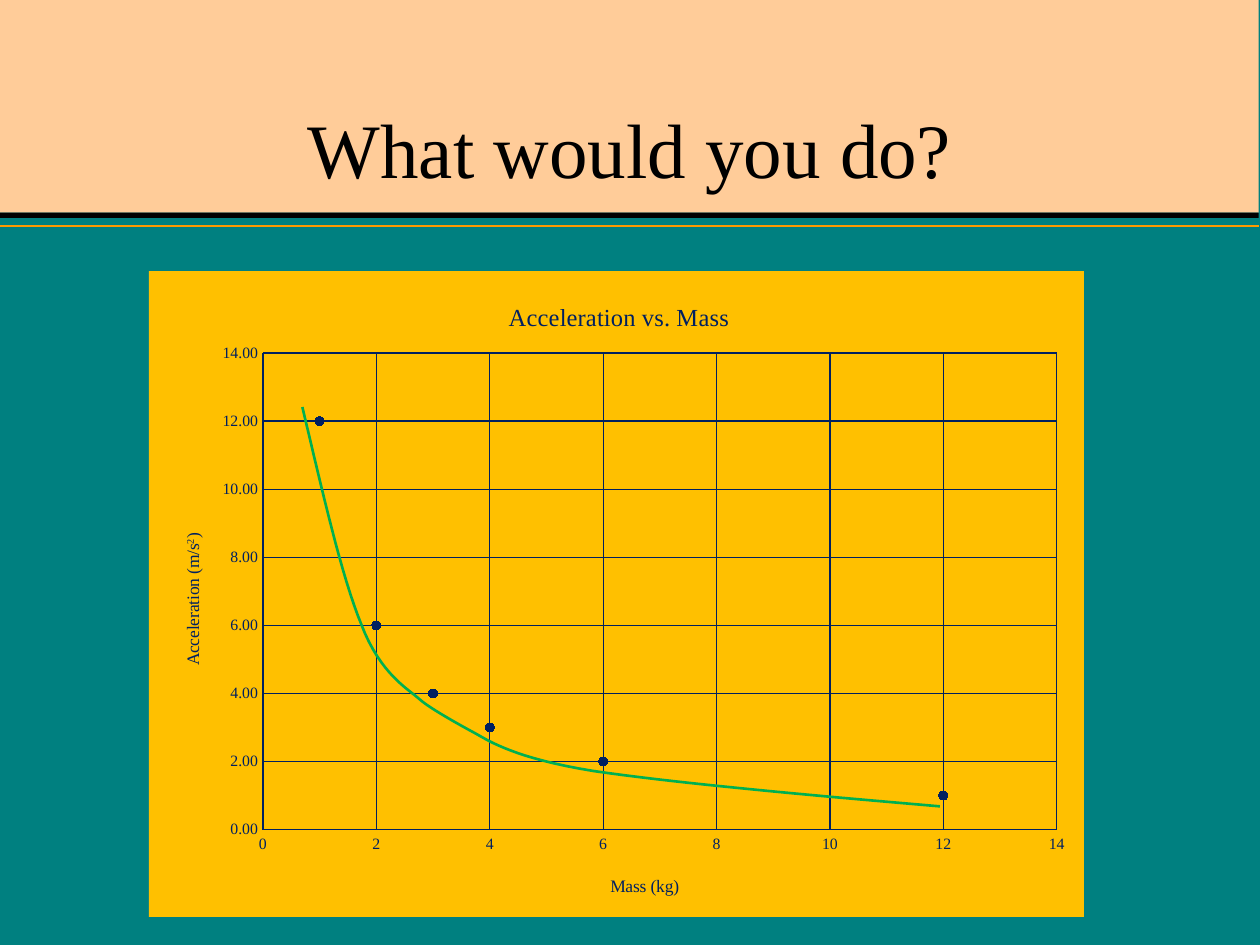
from lxml.etree import SubElement
from pptx import Presentation
from pptx.chart.data import XyChartData
from pptx.dml.color import RGBColor
from pptx.enum.chart import XL_CHART_TYPE, XL_MARKER_STYLE, XL_TICK_LABEL_POSITION, XL_TICK_MARK
from pptx.enum.shapes import MSO_CONNECTOR, MSO_SHAPE
from pptx.enum.text import MSO_ANCHOR, PP_ALIGN
from pptx.oxml import parse_xml
from pptx.oxml.ns import nsdecls, qn
from pptx.util import Pt

# Content
TITLE = "What would you do?"
CHART_TITLE = "Acceleration vs. Mass"
POINTS = [(12, 1), (6, 2), (4, 3), (3, 4), (2, 6), (1, 12)]
X_TITLE = [("Mass (kg)", False)]
Y_TITLE = [("Acceleration (m/s", False), ("2", True), (")", False)]

FONT, NAVY = "Times New Roman", "002060"
BAND_W = 719.3
BANDS = [(0, 121.5, "FFCC99"), (121.5, 3, "000000")]  # top, height, colour
RULE_Y = 129
CHART_BOX = (85.1, 154.9, 534.3, 369.1)

# Trend curve: start, then two control points and an end for each piece
CURVE_START = (172.8, 232.6)
CURVE = [
    ((184.3, 280.8), (195.1, 329), (206.6, 357.1)),
    ((217.4, 385.2), (233.3, 393.8), (239.8, 399.6)),
    ((246.2, 405.4), (266.4, 416.2), (272.9, 419.8)),
    ((279.4, 423.4), (294.5, 433.4), (339.1, 440.6)),
    ((383, 447.1), (460.1, 454.3), (537.1, 460.8)),
]
STEPS = 16


def rgb(value):
    return RGBColor.from_string(value)


def style_font(font, size, color):
    font.name, font.size, font.bold = FONT, Pt(size), False
    font.color.rgb = rgb(color)


def style_line(line, color, width):
    line.color.rgb = rgb(color)
    line.width = Pt(width)


def set_layout(parent, index, **values):
    """Place a chart part by fractions of the chart's size."""
    for old in parent.findall(qn("c:layout")):
        parent.remove(old)
    layout = parse_xml(f"<c:layout {nsdecls('c')}><c:manualLayout/></c:layout>")
    for tag, value in values.items():
        SubElement(layout[0], qn("c:" + tag)).set("val", str(value))
    parent.insert(index, layout)


def set_title(title, runs, size, x, y):
    p = title.text_frame.paragraphs[0]
    style_font(p.font, size, NAVY)
    for text, raised in runs:
        r = p.add_run()
        r.text = text
        if raised:
            r.font._element.set("baseline", "30000")
    set_layout(title._element, 1, xMode="edge", yMode="edge", x=x, y=y)


def bezier(p0, p1, p2, p3, t):
    u = 1 - t
    return tuple(Pt(u**3 * a + 3 * u * u * t * b + 3 * u * t * t * c + t**3 * d)
                 for a, b, c, d in zip(p0, p1, p2, p3))


prs = Presentation()
prs.slide_width, prs.slide_height = Pt(720), Pt(540)
s = prs.slides.add_slide(prs.slide_layouts[5])
s.background.fill.solid()
s.background.fill.fore_color.rgb = rgb("008080")

# Header bands and rule
for top, height, color in BANDS:
    sp = s.shapes.add_shape(MSO_SHAPE.RECTANGLE, 0, Pt(top), Pt(BAND_W), Pt(height))
    sp.shadow.inherit = False
    sp.fill.solid()
    sp.fill.fore_color.rgb = rgb(color)
    sp.line.fill.background()
rule = s.shapes.add_connector(MSO_CONNECTOR.STRAIGHT, 0, Pt(RULE_Y), Pt(BAND_W), Pt(RULE_Y))
style_line(rule.line, "FF9900", 1)
SubElement(rule._element.spPr, qn("a:effectLst"))

# Title, brought in front of the bands
title = s.shapes.title
title.element.getparent().append(title.element)
title.left, title.top, title.width, title.height = Pt(54), Pt(27.4), Pt(612), Pt(87)
tf = title.text_frame
tf.text = TITLE
tf.vertical_anchor = MSO_ANCHOR.BOTTOM
p = tf.paragraphs[0]
p.alignment = PP_ALIGN.CENTER
style_font(p.font, 44, "000000")

# Scatter chart
data = XyChartData(number_format="0.00")
series = data.add_series("Series 1")
for x, y in POINTS:
    series.add_data_point(x, y)
chart = s.shapes.add_chart(XL_CHART_TYPE.XY_SCATTER, *map(Pt, CHART_BOX), data).chart
style_font(chart.font, 10, NAVY)
chart.has_legend = False
chart._chartSpace.chart.addnext(parse_xml(
    f'<c:spPr {nsdecls("c", "a")}><a:solidFill><a:srgbClr val="FFC000"/></a:solidFill>'
    "<a:ln><a:noFill/></a:ln></c:spPr>"))
chart.has_title = True
set_title(chart.chart_title, [(CHART_TITLE, False)], 14, 0.38, 0.04)
set_layout(chart._chartSpace.chart.plotArea, 0, layoutTarget="inner", xMode="edge",
           yMode="edge", x=0.122, y=0.127, w=0.849, h=0.738)

plot = chart.plots[0]
plot.vary_by_categories = False
ser = plot.series[0]
ser.smooth = False
ser.format.line.fill.background()
ser.marker.style, ser.marker.size = XL_MARKER_STYLE.CIRCLE, 5
ser.marker.format.fill.solid()
ser.marker.format.fill.fore_color.rgb = rgb(NAVY)
style_line(ser.marker.format.line, NAVY, 0.75)

# Axes share one scale and style
for axis, runs, number_format, x, y in [
    (chart.category_axis, X_TITLE, "General", 0.49, 0.93),
    (chart.value_axis, Y_TITLE, "0.00", 0.03, 0.4),
]:
    axis.minimum_scale, axis.maximum_scale, axis.major_unit = 0, 14, 2
    axis.major_tick_mark = axis.minor_tick_mark = XL_TICK_MARK.NONE
    axis.tick_label_position = XL_TICK_LABEL_POSITION.NEXT_TO_AXIS
    axis.tick_labels.number_format = number_format
    axis.tick_labels.number_format_is_linked = False
    style_font(axis.tick_labels.font, 9, NAVY)
    axis.has_major_gridlines = True
    for line in (axis.format.line, axis.major_gridlines.format.line):
        style_line(line, NAVY, 0.75)
    axis.has_title = True
    set_title(axis.axis_title, runs, 10, x, y)

# Hand-drawn trend curve
vertices, start = [], CURVE_START
for c1, c2, end in CURVE:
    vertices += [bezier(start, c1, c2, end, i / STEPS) for i in range(1, STEPS + 1)]
    start = end
builder = s.shapes.build_freeform(*map(Pt, CURVE_START))
builder.add_line_segments(vertices, close=False)
curve = builder.convert_to_shape()
curve.shadow.inherit = False
curve.fill.background()
style_line(curve.line, "00B050", 1.5)

prs.save("out.pptx")
